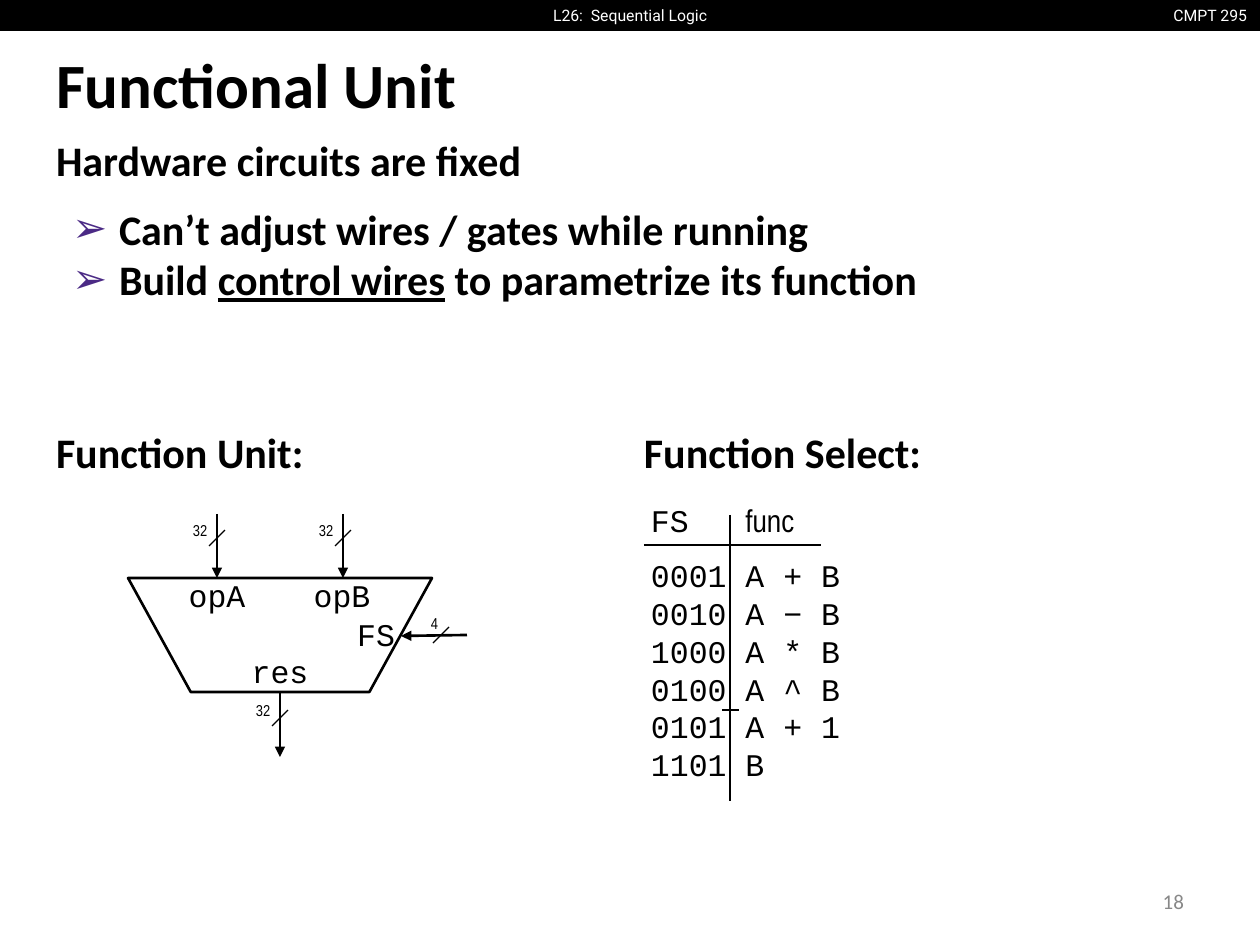
from dataclasses import dataclass
from typing import NamedTuple

from lxml.etree import SubElement
from pptx import Presentation
from pptx.dml.color import RGBColor
from pptx.enum.shapes import MSO_CONNECTOR, MSO_SHAPE
from pptx.enum.text import MSO_ANCHOR, MSO_AUTO_SIZE, PP_ALIGN
from pptx.oxml.ns import qn
from pptx.util import Emu, Pt

PX = 914400 / 126
BLACK, WHITE, GRAY, PURPLE = "000000", "FFFFFF", "888888", "4B2A85"
INSET = 13


class Point(NamedTuple):
    x: int
    y: int


class Area(NamedTuple):
    left: int
    top: int
    width: int
    height: int


@dataclass(frozen=True)
class Style:
    font: str
    size: int
    color: str = BLACK
    bold: bool = False


@dataclass(frozen=True)
class Bus:
    """An arrow crossed by a slash, with its number of bits beside it."""
    start: Point
    end: Point
    slash: Point
    bits: str
    label: Point


TITLE = Style("Calibri", 36, bold=True)
BODY = Style("Calibri", 24, bold=True)
CODE = Style("Courier New", 18)
SMALL = Style("Arial Narrow", 9)
HEADER = Style("Roboto", 9, WHITE)
NUMBER = Style("Calibri", 12, GRAY)

BUSES = [
    Bus(Point(217, 514), Point(217, 578), Point(217, 538), "32", Point(180, 508)),
    Bus(Point(343, 514), Point(343, 578), Point(343, 538), "32", Point(306, 508)),
    Bus(Point(280, 693), Point(280, 757), Point(280, 718), "32", Point(243, 688)),
    Bus(Point(467, 635), Point(401, 636), Point(441, 635), "4", Point(418, 601)),
]
PORTS = {
    "opA": Point(217, 595),
    "opB": Point(342, 595),
    "res": Point(280, 671),
    "FS": Point(376, 634),
}
FUNCTIONS = ["0001 A + B", "0010 A − B", "1000 A * B",
             "0100 A ^ B", "0101 A + 1", "1101 B"]


def px(length: int) -> Emu:
    return Emu(round(length * PX))


def rgb(color: str) -> RGBColor:
    return RGBColor.from_string(color)


def style_runs(paragraph, style: Style) -> None:
    for span in paragraph.runs:
        span.font.name = style.font
        span.font.size = Pt(style.size)
        span.font.bold = style.bold
        span.font.color.rgb = rgb(style.color)


def write(box, lines: list[str], style: Style, align=PP_ALIGN.LEFT,
          anchor=MSO_ANCHOR.TOP, inset: int = INSET) -> None:
    frame = box.text_frame
    frame.text = "\n".join(lines)
    frame.auto_size = MSO_AUTO_SIZE.NONE
    frame.word_wrap = True
    frame.vertical_anchor = anchor
    frame.margin_left = frame.margin_right = px(INSET)
    frame.margin_top = frame.margin_bottom = px(inset)
    for paragraph in frame.paragraphs:
        paragraph.alignment = align
        paragraph.space_before = Pt(0)
        style_runs(paragraph, style)


def add_text(page, area: Area, lines: list[str], style: Style, **layout):
    box = page.shapes.add_textbox(*map(px, area))
    write(box, lines, style, **layout)
    return box


def fill_placeholder(box, area: Area, lines: list[str], style: Style) -> None:
    box.left, box.top, box.width, box.height = map(px, area)
    write(box, lines, style)


def set_bullet(paragraph, symbol: str = "") -> None:
    """Give the paragraph a purple bullet, or none without a symbol."""
    properties = paragraph._p.get_or_add_pPr()
    properties.set("marL", str(px(63 if symbol else 0)))
    properties.set("indent", str(px(-47 if symbol else 0)))
    if symbol:
        color = SubElement(properties, qn("a:buClr"))
        SubElement(color, qn("a:srgbClr"), val=PURPLE)
        SubElement(properties, qn("a:buChar"), char=symbol)
    else:
        SubElement(properties, qn("a:buNone"))


def add_line(page, start: Point, end: Point, width: float = 0.75, arrow: bool = False) -> None:
    line = page.shapes.add_connector(MSO_CONNECTOR.STRAIGHT, *map(px, start + end))
    line.line.color.rgb = rgb(BLACK)
    line.line.width = Pt(width)
    if arrow:
        SubElement(line.line._get_or_add_ln(), qn("a:tailEnd"), type="triangle")
    SubElement(line._element.spPr, qn("a:effectLst"))


def add_bus(page, bus: Bus) -> None:
    x, y = bus.slash
    add_line(page, bus.start, bus.end, 1.5, arrow=True)
    add_line(page, Point(x + 8, y - 8), Point(x - 8, y + 8))
    add_text(page, Area(*bus.label, 64, 64), [bus.bits], SMALL)


def add_header(page) -> None:
    bar = page.shapes.add_shape(MSO_SHAPE.RECTANGLE, *map(px, Area(0, 0, 1260, 31)))
    bar.shadow.inherit = False
    bar.fill.solid()
    bar.fill.fore_color.rgb = rgb(BLACK)
    bar.line.fill.background()
    for area, text, align in (
        (Area(1158, 0, 102, 31), "CMPT 295", PP_ALIGN.RIGHT),
        (Area(513, 0, 234, 31), "L26:  Sequential Logic", PP_ALIGN.CENTER),
    ):
        box = add_text(page, area, [text], HEADER, align=align, inset=6)
        box.text_frame.word_wrap = False


def add_body_text(page) -> None:
    fill_placeholder(page.shapes.title, Area(43, 33, 1174, 88), ["Functional Unit"], TITLE)
    heading, points, unit, select = list(page.placeholders)[1:]
    for box, area, text in (
        (heading, Area(43, 121, 1174, 220), "Hardware circuits are fixed"),
        (unit, Area(43, 413, 1174, 83), "Function Unit:"),
        (select, Area(631, 413, 1174, 83), "Function Select:"),
    ):
        fill_placeholder(box, area, [text], BODY)
        set_bullet(box.text_frame.paragraphs[0])

    fill_placeholder(points, Area(43, 190, 1342, 204),
                     ["Can’t adjust wires / gates while running", "Build "], BODY)
    build = points.text_frame.paragraphs[1]
    for text, underlined in (("control wires", True), (" to parametrize its function", False)):
        span = build.add_run()
        span.text = text
        span.font.underline = underlined
    style_runs(build, BODY)
    for paragraph in points.text_frame.paragraphs:
        set_bullet(paragraph, "➢")


def add_function_unit(page) -> None:
    unit = page.shapes.add_shape(MSO_SHAPE.TRAPEZOID, *map(px, Area(128, 578, 304, 114)))
    unit.adjustments[0] = 0.55
    unit.rotation = 180
    unit.shadow.inherit = False
    unit.fill.background()
    unit.line.color.rgb = rgb(BLACK)
    unit.line.width = Pt(1.5)
    for bus in BUSES:
        add_bus(page, bus)
    for name, center in PORTS.items():
        area = Area(center.x - 61, center.y - 28, 122, 56)
        add_text(page, area, [name], CODE, align=PP_ALIGN.CENTER, anchor=MSO_ANCHOR.MIDDLE)


def add_function_select(page) -> None:
    box = add_text(page, Area(638, 488, 294, 48), ["FS   "] + FUNCTIONS, CODE)
    heading, first_row = box.text_frame.paragraphs[:2]
    span = heading.add_run()
    span.text = "func"
    style_runs(heading, CODE)
    span.font.name = "Arial Narrow"
    first_row.space_before = Pt(10)
    add_line(page, Point(644, 545), Point(821, 545))
    add_line(page, Point(730, 515), Point(730, 801))
    add_line(page, Point(722, 710), Point(739, 710))


def main() -> None:
    deck = Presentation()
    deck.slide_width, deck.slide_height = px(1260), px(945)
    comparison = deck.slide_layouts[4]
    page = deck.slides.add_slide(comparison)
    add_header(page)
    add_body_text(page)
    add_function_unit(page)
    add_function_select(page)
    add_text(page, Area(903, 876, 294, 50), ["18"], NUMBER,
             align=PP_ALIGN.RIGHT, anchor=MSO_ANCHOR.MIDDLE, inset=6)
    deck.save("out.pptx")


if __name__ == "__main__":
    main()
